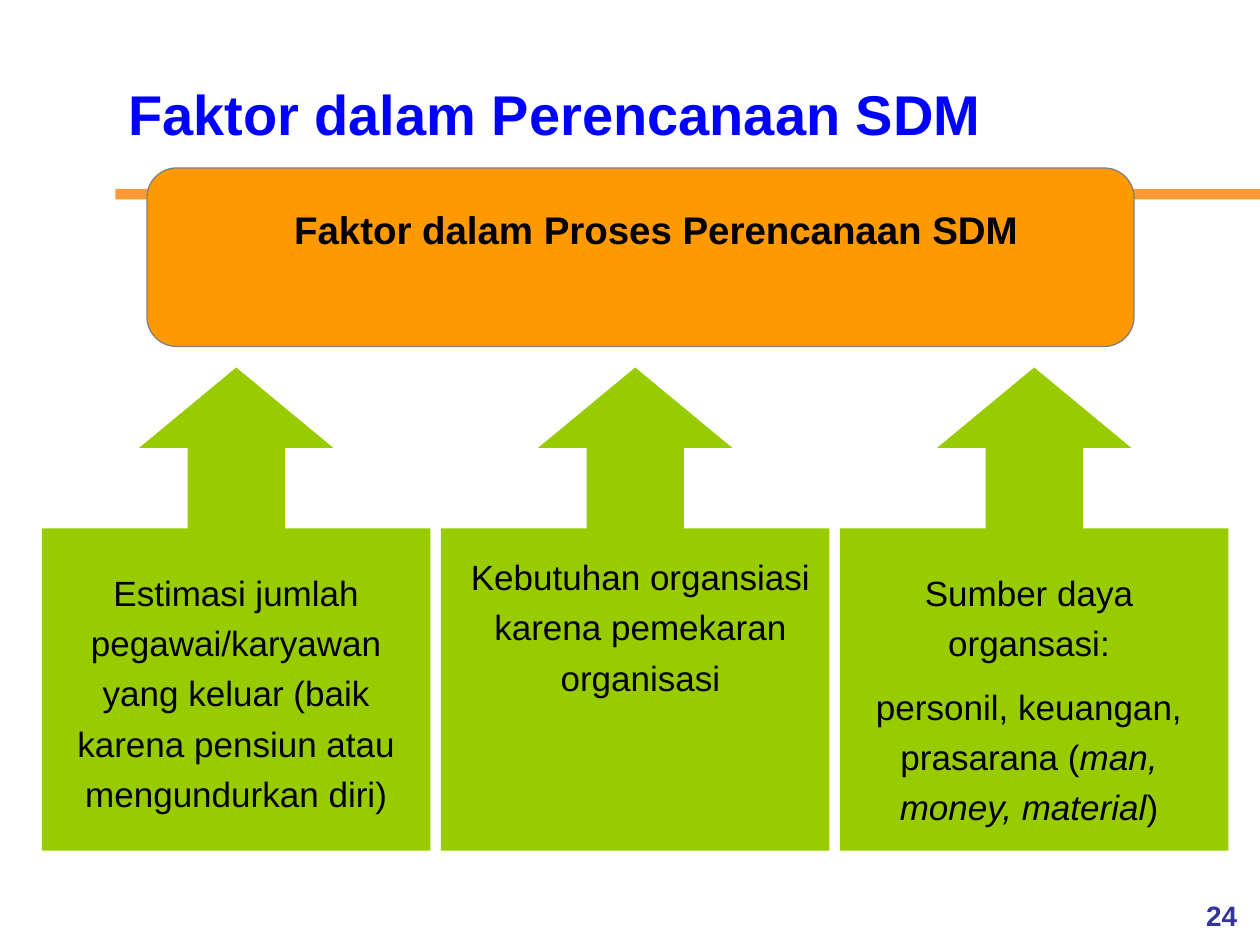
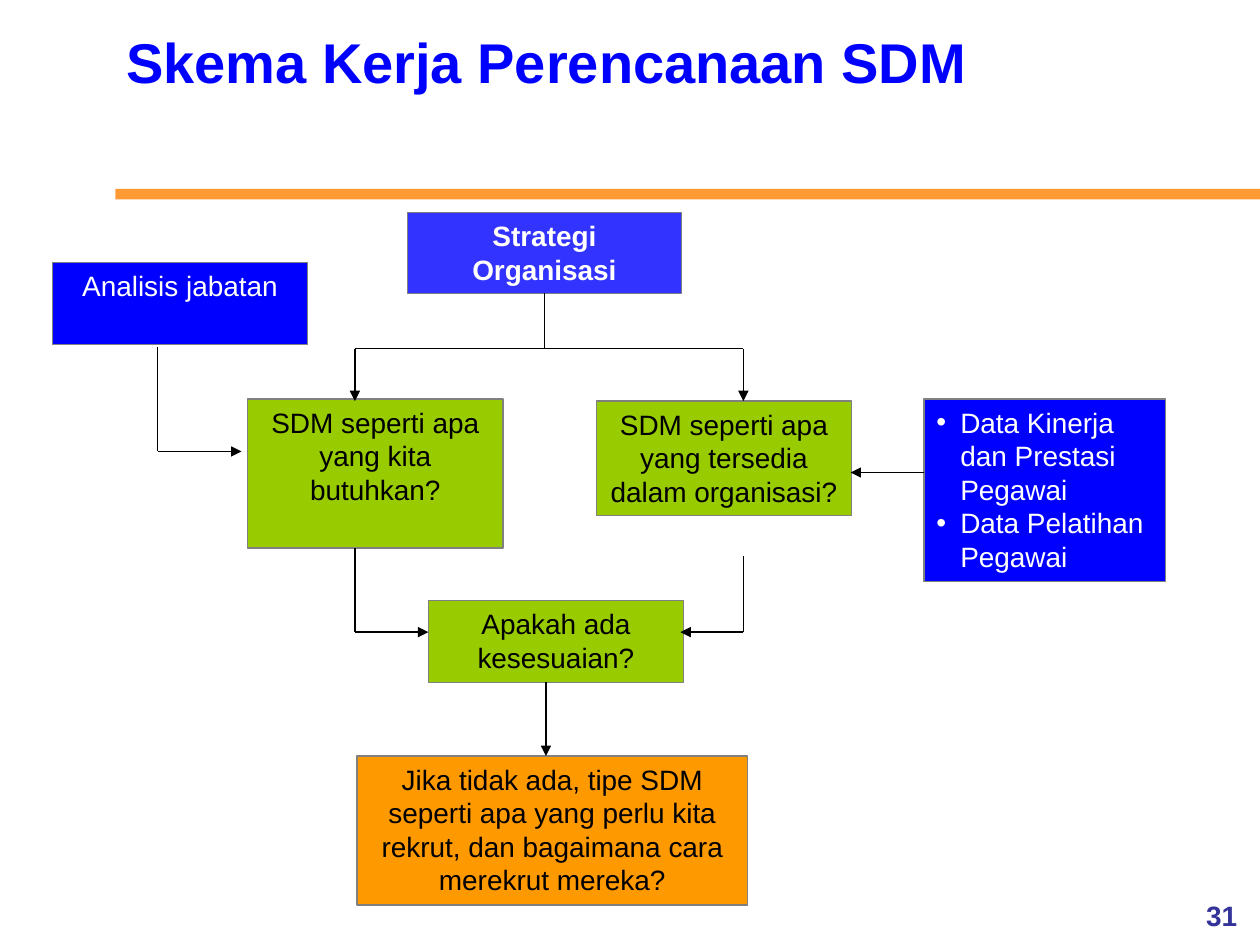
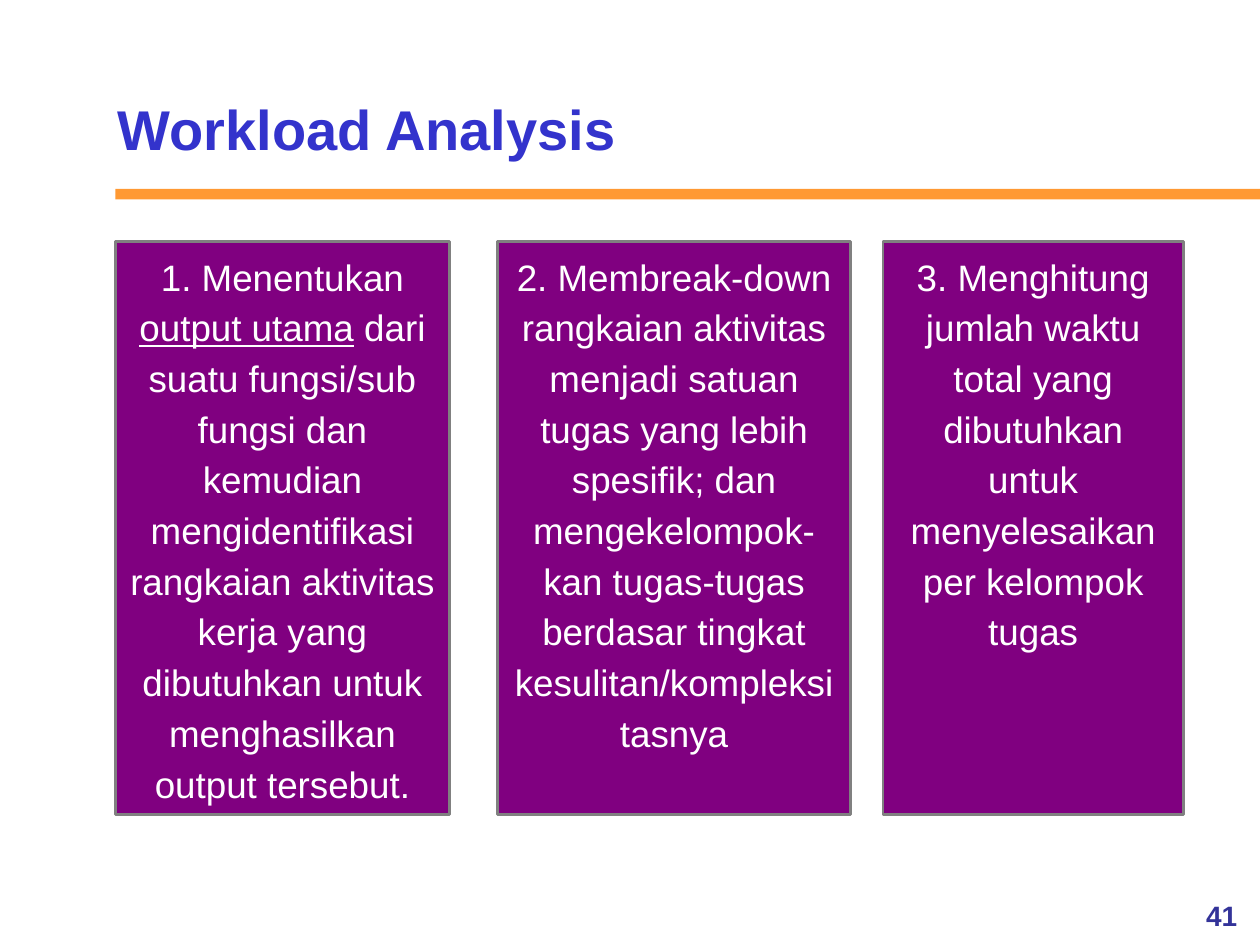
from dataclasses import dataclass

from lxml import etree
from pptx import Presentation
from pptx import util as u
from pptx.dml.color import RGBColor
from pptx.enum import shapes, text
from pptx.oxml.ns import qn

CELL = u.Inches(1) // 12  # the slide is a grid of 120 columns by 90 rows
COLS, ROWS = 120, 90
TITLE_ONLY = 5


@dataclass(frozen=True)
class Theme:
    font: str = "Arial"
    band: str = "FF9933"
    blue: str = "0000FF"
    indigo: str = "3333FF"
    violet: str = "3333CC"
    navy: str = "333399"
    orange: str = "FF9900"
    green: str = "99CC00"
    purple: str = "800080"
    border: str = "808080"
    black: str = "000000"
    white: str = "FFFFFF"
    title: int = 32
    heading: int = 22
    step: int = 21
    body: int = 20
    small: int = 16


T = Theme()


def grid(*cells):
    return [u.Emu(round(c * CELL)) for c in cells]


def write(sp, paragraphs, size, color, bold=False, align=text.PP_ALIGN.CENTER,
          spacing=None, gap=0):
    """Fill a shape; a paragraph is a string or a list of (string, font attribute)."""
    tf = sp.text_frame
    tf.word_wrap = True
    tf.auto_size = text.MSO_AUTO_SIZE.NONE
    tf.vertical_anchor = text.MSO_ANCHOR.TOP
    for i, pieces in enumerate(paragraphs):
        p = tf.paragraphs[0] if i == 0 else tf.add_paragraph()
        p.alignment = align
        if spacing:
            p.line_spacing = spacing
        if gap and i:
            p.space_before = u.Pt(gap)
        for words, mark in [(pieces, None)] if isinstance(pieces, str) else pieces:
            r = p.add_run()
            r.text = words
            f = r.font
            f.name, f.size, f.bold = T.font, u.Pt(size), bold
            f.color.rgb = RGBColor.from_string(color)
            if mark:
                setattr(f, mark, True)


def add_block(s, preset, cells, fill, line_width=0):
    sp = s.shapes.add_shape(preset, *grid(*cells))
    sp.shadow.inherit = False
    sp.fill.solid()
    sp.fill.fore_color.rgb = RGBColor.from_string(fill)
    if line_width:
        sp.line.color.rgb = RGBColor.from_string(T.border)
        sp.line.width = u.Pt(line_width)
    else:
        sp.line.fill.background()
    return sp


def add_box(s, cells, fill, paragraphs, size=T.small, color=T.black,
            line_width=0.75, **style):
    sp = add_block(s, shapes.MSO_SHAPE.RECTANGLE, cells, fill, line_width)
    write(sp, paragraphs, size, color, **style)
    return sp


def add_label(s, cells, paragraphs, size, color=T.black, **style):
    sp = s.shapes.add_textbox(*grid(*cells))
    write(sp, paragraphs, size, color, **style)


def add_path(s, points, arrow=True):
    """Join the points with straight lines, the last one ending in an arrowhead."""
    lines = []
    for start, end in zip(points, points[1:]):
        line = s.shapes.add_connector(shapes.MSO_CONNECTOR.STRAIGHT, *grid(*start, *end))
        line.line.color.rgb = RGBColor.from_string(T.black)
        line.line.width = u.Pt(0.75)
        etree.SubElement(line._element.spPr, qn("a:effectLst"))
        lines.append(line)
    if arrow:
        etree.SubElement(lines[-1].line._get_or_add_ln(), qn("a:tailEnd"), type="triangle")
    return lines


def add_bullets(sp, indent):
    for p in sp.text_frame.paragraphs:
        pPr = p._p.get_or_add_pPr()
        pPr.set("marL", str(indent))
        pPr.set("indent", str(-indent))
        etree.SubElement(pPr, qn("a:buFont"), typeface=T.font)
        etree.SubElement(pPr, qn("a:buChar"), char="•")


def new_slide(prs, title, cells, number, color=T.blue, spacing=None):
    s = prs.slides.add_slide(prs.slide_layouts[TITLE_ONLY])
    sp = s.shapes.title
    sp.left, sp.top, sp.width, sp.height = grid(*cells)
    write(sp, [title], T.title, color, bold=True, align=text.PP_ALIGN.LEFT, spacing=spacing)
    add_block(s, shapes.MSO_SHAPE.RECTANGLE, (11, 18, COLS - 11, 1), T.band)
    add_label(s, (112.7, 85, 7.3, 4.4), [number], T.small, T.navy, bold=True)
    return s


def factors_slide(prs):
    s = new_slide(prs, "Faktor dalam Perencanaan SDM", (11, 7, 98, 7.6), "24")
    add_block(s, shapes.MSO_SHAPE.ROUNDED_RECTANGLE, (14, 16, 94, 17), T.orange, 0.75)
    add_label(s, (23, 18.2, 79, 6.5), ["Faktor dalam Proses Perencanaan SDM"],
              T.heading, bold=True, spacing=1.2)
    factors = [
        ((5, 53, 35, 25.4), ["Estimasi jumlah pegawai/karyawan yang keluar "
                             "(baik karena pensiun atau mengundurkan diri)"]),
        ((43, 51.5, 36, 15.7), ["Kebutuhan organsiasi karena pemekaran organisasi"]),
        ((81, 53, 34, 27), ["Sumber daya organsasi:",
                            [("personil, keuangan, prasarana (", None),
                             ("man, money, material", "italic"), (")", None)]]),
    ]
    for i, (cells, paragraphs) in enumerate(factors):
        callout = add_block(s, shapes.MSO_SHAPE.UP_ARROW_CALLOUT,
                            (4 + 38 * i, 35, 37, 46), T.green)
        for k, value in enumerate((0.25, 0.25, 0.207, 0.667)):
            callout.adjustments[k] = value
        add_label(s, cells, paragraphs, T.body, spacing=1.2, gap=7.5)


def scheme_slide(prs):
    s = new_slide(prs, "Skema Kerja Perencanaan SDM", (10.8, 2, 83, 7.7), "31")
    box_w = 24.3
    strategy = add_box(s, (38.8, 20.25, 26.1, 7.7), T.indigo, ["Strategi Organisasi"],
                       color=T.white, bold=True)
    add_box(s, (23.6, 38, box_w, 14.2), T.green, ["SDM seperti apa yang kita butuhkan?"])
    add_box(s, (56.8, 38.2, box_w, 10.9), T.green,
            ["SDM seperti apa yang tersedia dalam organisasi?"])
    add_box(s, (40.8, 57.2, box_w, 7.8), T.green, ["Apakah ada kesesuaian?"])
    add_box(s, (34, 72, 37.2, 14.2), T.orange,
            ["Jika tidak ada, tipe SDM seperti apa yang perlu kita rekrut, "
             "dan bagaimana cara merekrut mereka?"])
    add_box(s, (5, 25, box_w, 7.8), T.blue, ["Analisis jabatan"], color=T.white)
    data = add_box(s, (88, 38, 23, 17.4), T.blue,
                   ["Data Kinerja dan Prestasi Pegawai", "Data Pelatihan Pegawai"],
                   color=T.white, align=text.PP_ALIGN.LEFT)
    add_bullets(data, u.Inches(0.19))

    need_x, supply_x, fork_y, match_y = 33.8, 70.8, 33.2, 60.2
    stem, = add_path(s, [(51.85, 28), (51.85, fork_y)], arrow=False)
    stem.begin_connect(strategy, 2)
    add_path(s, [(need_x, fork_y), (supply_x, fork_y)], arrow=False)
    for x in (need_x, supply_x):
        add_path(s, [(x, fork_y), (x, 38.2)])
    add_path(s, [(need_x, 52.2), (need_x, match_y), (40.8, match_y)])
    add_path(s, [(supply_x, 53), (supply_x, match_y), (64.8, match_y)])
    add_path(s, [(52, 65), (52, 72)])
    add_path(s, [(15, 33), (15, 43), (23, 43)])
    add_path(s, [(88, 45), (81, 45)])


def workload_slide(prs):
    s = new_slide(prs, "Workload Analysis", (10, 7.4, 50, 8.5), "41", T.violet, 1.15)
    steps = [
        (11, 31.8, [("1. Menentukan ", None), ("output utama", "underline"),
                    (" dari suatu fungsi/sub fungsi dan kemudian mengidentifikasi rangkaian "
                     "aktivitas kerja yang dibutuhkan untuk menghasilkan output tersebut.",
                     None)]),
        (47.4, 33.6, "2. Membreak-down rangkaian aktivitas menjadi satuan tugas yang lebih "
                     "spesifik; dan mengekelompok-kan tugas-tugas berdasar tingkat "
                     "kesulitan/kompleksitasnya"),
        (84.1, 28.6, "3. Menghitung jumlah waktu total yang dibutuhkan untuk menyelesaikan "
                     "per kelompok tugas"),
    ]
    for left, width, words in steps:
        add_box(s, (left, 23, width, 54.6), T.purple, [words], T.step, T.white,
                line_width=1.5, spacing=1.15)


def main():
    prs = Presentation()
    prs.slide_width, prs.slide_height = grid(COLS, ROWS)
    factors_slide(prs)
    scheme_slide(prs)
    workload_slide(prs)
    prs.save("out.pptx")


if __name__ == "__main__":
    main()
